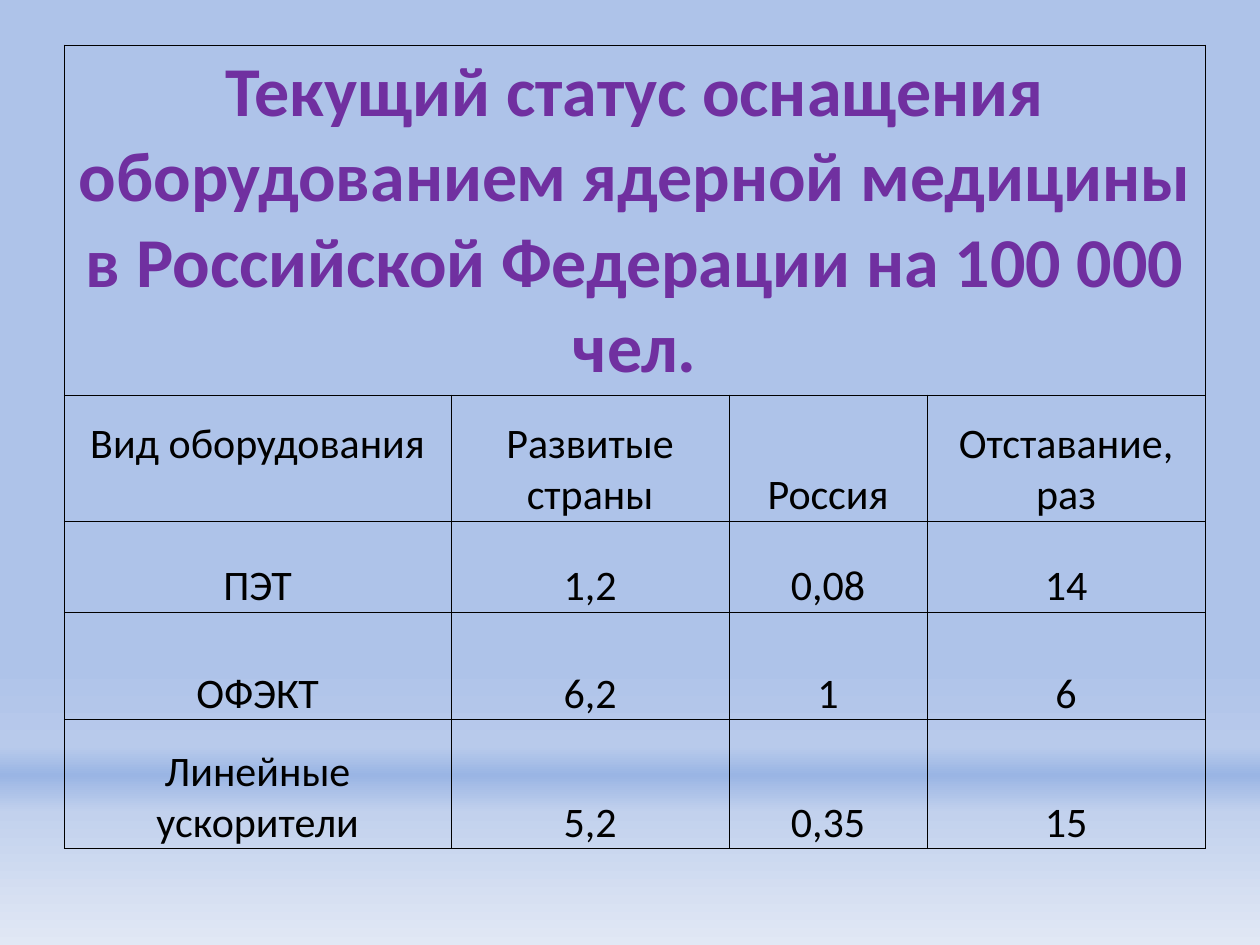
import pptx
import pptx.dml.color
import pptx.enum.text
import pptx.oxml
import pptx.oxml.ns
import pptx.util

Pt = pptx.util.Pt
ANCHOR = pptx.enum.text.MSO_ANCHOR

TITLE = ("Текущий статус оснащения оборудованием ядерной медицины "
         "в Российской Федерации на 100 000 чел.")
ROWS = [
    ("Вид оборудования", "Развитые страны", "Россия", "Отставание, раз"),
    ("ПЭТ", "1,2", "0,08", "14"),
    ("ОФЭКТ", "6,2", "1", "6"),
    ("Линейные ускорители", "5,2", "0,35", "15"),
]

THEME = {
    "font": "Calibri",
    "title": "7030A0",
    "text": "000000",
    "border": "000000",
    "title_size": 40,
    "text_size": 24,
    "border_width": 0.5,
    "background": [(70, "AEC3E9"), (79, "B8CAEB"), (82, "9AB5E4"),
                   (86, "C2D1ED"), (100, "E1E8F5")],
}

SLIDE_SIZE = (720, 540)
TABLE_ORIGIN = (36.7, 25.7)
COL_WIDTHS = (221, 159, 113, 159)
ROW_HEIGHTS = (200, 72, 52, 61.7, 73.7)
CELL_MARGIN = 0.7
HEADER_LIFT = 29.3  # one line of body text


def xml(markup):
    tag, rest = markup.split(" ", 1)
    return pptx.oxml.parse_xml(f"{tag} {pptx.oxml.ns.nsdecls('a')} {rest}")


def paint_background(slide, stops):
    fill = slide.background.fill
    fill.gradient()
    fill.gradient_angle = 270  # counter-clockwise, so the stops run downwards
    stop_list = slide.background._cSld.find(".//" + pptx.oxml.ns.qn("a:gsLst"))
    for old in list(stop_list):
        stop_list.remove(old)
    for percent, color in stops:
        stop_list.append(xml(f'<a:gs pos="{percent * 1000}">'
                             f'<a:srgbClr val="{color}"/></a:gs>'))


def set_borders(cell, color, width):
    props = cell._tc.get_or_add_tcPr()
    for i, side in enumerate("LRTB"):
        props.insert(i, xml(f'<a:ln{side} w="{Pt(width)}">'
                            f'<a:solidFill><a:srgbClr val="{color}"/></a:solidFill>'
                            f'</a:ln{side}>'))


def write(cell, text, *, size=THEME["text_size"], color=THEME["text"],
          bold=False, anchor=ANCHOR.BOTTOM, bottom=0):
    cell.vertical_anchor = anchor
    cell.margin_left = cell.margin_right = cell.margin_top = Pt(CELL_MARGIN)
    cell.margin_bottom = Pt(bottom)
    p = cell.text_frame.paragraphs[0]
    p.alignment = pptx.enum.text.PP_ALIGN.CENTER
    r = p.add_run()
    r.text = text
    r.font.name = THEME["font"]
    r.font.size = Pt(size)
    r.font.bold = bold
    r.font.color.rgb = pptx.dml.color.RGBColor.from_string(color)


def add_equipment_table(slide):
    sizes = (sum(COL_WIDTHS), sum(ROW_HEIGHTS))
    frame = slide.shapes.add_table(len(ROW_HEIGHTS), len(COL_WIDTHS),
                                   *map(Pt, TABLE_ORIGIN + sizes))
    table = frame.table
    table.first_row = table.horz_banding = False
    for column, width in zip(table.columns, COL_WIDTHS):
        column.width = Pt(width)
    for row, height in zip(table.rows, ROW_HEIGHTS):
        row.height = Pt(height)
    for cell in table.iter_cells():
        cell.fill.background()
        set_borders(cell, THEME["border"], THEME["border_width"])

    table.cell(0, 0).merge(table.cell(0, len(COL_WIDTHS) - 1))
    write(table.cell(0, 0), TITLE, size=THEME["title_size"],
          color=THEME["title"], bold=True, anchor=ANCHOR.MIDDLE)
    for i, values in enumerate(ROWS, start=1):
        for j, value in enumerate(values):
            lift = HEADER_LIFT if (i, j) == (1, 0) else 0
            write(table.cell(i, j), value, bottom=lift)


def main():
    prs = pptx.Presentation()
    prs.slide_width, prs.slide_height = map(Pt, SLIDE_SIZE)
    slide = prs.slides.add_slide(prs.slide_layouts[6])
    paint_background(slide, THEME["background"])
    add_equipment_table(slide)
    prs.save("out.pptx")


if __name__ == "__main__":
    main()
